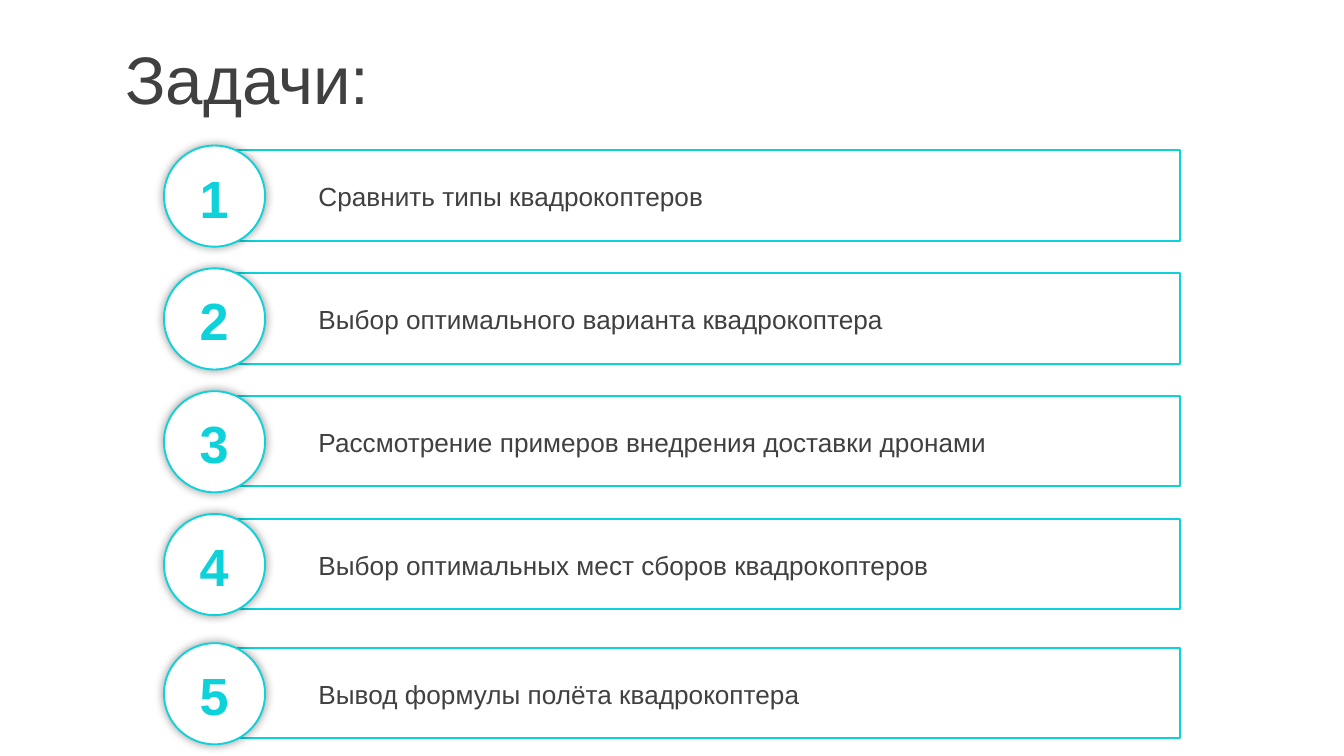
"""Build the numbered task list slide."""
from lxml import etree
from pptx import Presentation
from pptx.dml.color import RGBColor
from pptx.enum.shapes import MSO_SHAPE
from pptx.enum.text import MSO_ANCHOR, MSO_AUTO_SIZE, PP_ALIGN
from pptx.oxml import parse_xml
from pptx.oxml.ns import qn
from pptx.util import Cm, Pt

RECTANGLE, OVAL = MSO_SHAPE.RECTANGLE, MSO_SHAPE.OVAL
MIDDLE = MSO_ANCHOR.MIDDLE
LEFT, CENTER = PP_ALIGN.LEFT, PP_ALIGN.CENTER
NO_FIT = MSO_AUTO_SIZE.NONE
GROW = MSO_AUTO_SIZE.SHAPE_TO_FIT_TEXT
COLORS = {"text": "404040", "accent": "0DD2D9", "white": "FFFFFF", "shadow": "000000"}
TASKS = [
    "Сравнить типы квадрокоптеров",
    "Выбор оптимального варианта квадрокоптера",
    "Рассмотрение примеров внедрения доставки дронами",
    "Выбор оптимальных мест сборов квадрокоптеров",
    "Вывод формулы полёта квадрокоптера",
]
FIRST_TOP, PITCH, LAST_EXTRA = 2.75, 2.32, 0.12
SHADOW = (
    '<a:outerShdw xmlns:a="http://schemas.openxmlformats.org/drawingml/2006/main" '
    'blurRad="63500" dist="0" algn="ctr" rotWithShape="0">'
    f'<a:srgbClr val="{COLORS["shadow"]}"><a:alpha val="40000"/></a:srgbClr></a:outerShdw>'
)


def write(box, text, size, color, align, fit, bold=False):
    frame = box.text_frame
    frame.word_wrap = True
    frame.auto_size = fit
    frame.vertical_anchor = MIDDLE
    paragraph = frame.paragraphs[0]
    paragraph.text = text
    paragraph.alignment = align
    paragraph.font.name = "Arial"
    paragraph.font.size = Pt(size)
    paragraph.font.bold = bold
    paragraph.font.color.rgb = RGBColor.from_string(COLORS[color])


def add_outline(page, kind, left, top, width, height):
    shape = page.shapes.add_shape(kind, Cm(left), Cm(top), Cm(width), Cm(height))
    shape.shadow.inherit = False
    shape.fill.background()
    shape.line.color.rgb = RGBColor.from_string(COLORS["accent"])
    shape.line.width = Pt(1)
    return shape


deck = Presentation()
deck.slide_width, deck.slide_height = Cm(25.4), Cm(14.28)
page = deck.slides.add_slide(deck.slide_layouts[5])

title = page.shapes.title
title.left, title.top, title.width, title.height = Cm(2.11), Cm(0.66), Cm(23.29), Cm(1.6)
write(title, "Задачи:", 36, "text", LEFT, NO_FIT)

for index, task in enumerate(TASKS):
    top = FIRST_TOP + index * PITCH
    if index == len(TASKS) - 1:
        top += LAST_EXTRA

    add_outline(page, RECTANGLE, 4.04, top + 0.09, 18.26, 1.71)

    label = page.shapes.add_textbox(Cm(5.77), Cm(top + 0.53), Cm(15.95), Cm(0.86))
    write(label, task, 14, "text", LEFT, GROW)

    circle = add_outline(page, OVAL, 3.1, top, 1.91, 1.91)
    circle.fill.solid()
    circle.fill.fore_color.rgb = RGBColor.from_string(COLORS["white"])
    effects = circle.element.spPr.find(qn("a:effectLst"))
    effects.append(parse_xml(SHADOW))

    number = page.shapes.add_textbox(Cm(3.45), Cm(top + 0.25), Cm(1.2), Cm(1.45))
    write(number, str(index + 1), 28, "accent", CENTER, GROW, bold=True)

etree.cleanup_namespaces(page.element)
deck.save("out.pptx")
